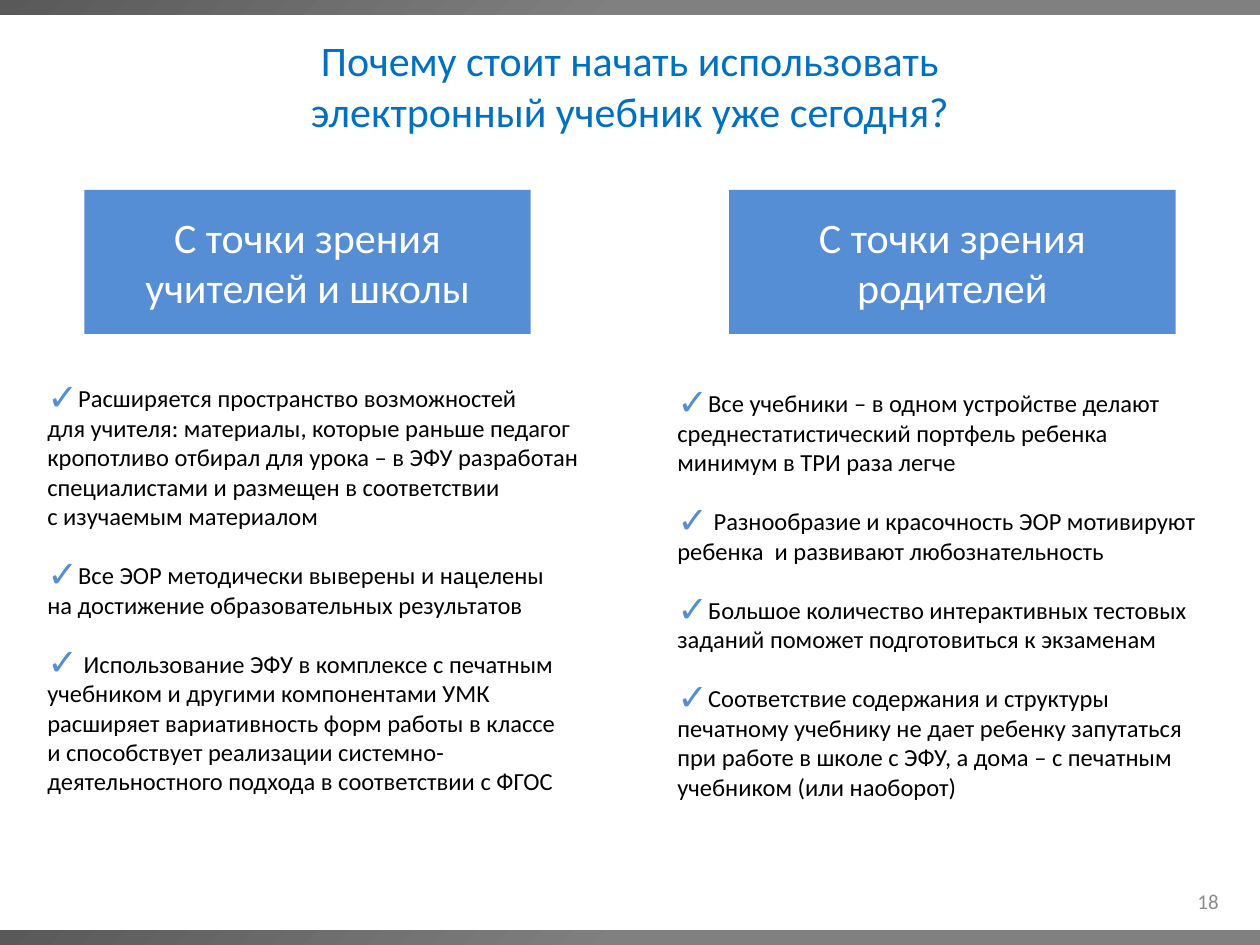
from lxml.etree import SubElement
from pptx import Presentation
from pptx.dml.color import RGBColor
from pptx.enum.shapes import MSO_SHAPE as Shape
from pptx.enum.text import MSO_ANCHOR as Anchor, MSO_AUTO_SIZE as AutoSize, PP_ALIGN as Align
from pptx.oxml.ns import qn
from pptx.util import Cm, Pt

DARK_GRAY = RGBColor(0x59, 0x59, 0x59)
GRAY = RGBColor(0x80, 0x80, 0x80)
NUMBER_GRAY = RGBColor(0x8C, 0x8C, 0x8C)
TITLE_BLUE = RGBColor(0x00, 0x70, 0xC0)
BLUE = RGBColor(0x55, 0x8E, 0xD5)
WHITE = RGBColor(0xFF, 0xFF, 0xFF)
BLACK = RGBColor(0x00, 0x00, 0x00)

TITLE = ["Почему стоит начать использовать", "электронный учебник уже сегодня?"]
TEACHER_REASONS = [
    ["Расширяется пространство возможностей",
     "для учителя: материалы, которые раньше педагог кропотливо отбирал для урока – "
     "в ЭФУ разработан специалистами и размещен в соответствии",
     "с изучаемым материалом"],
    ["Все ЭОР методически выверены и нацелены",
     "на достижение образовательных результатов"],
    [" Использование ЭФУ в комплексе с печатным учебником и другими компонентами УМК "
     "расширяет вариативность форм работы в классе",
     "и способствует реализации системно-деятельностного подхода в соответствии с ФГОС"],
]
PARENT_REASONS = [
    ["Все учебники – в одном устройстве делают среднестатистический портфель ребенка "
     "минимум в ТРИ раза легче"],
    [" Разнообразие и красочность ЭОР мотивируют ребенка  и развивают любознательность"],
    ["Большое количество интерактивных тестовых заданий поможет подготовиться к экзаменам"],
    ["Соответствие содержания и структуры печатному учебнику не дает ребенку запутаться "
     "при работе в школе с ЭФУ, а дома – с печатным учебником (или наоборот)"],
]


class SlideBuilder:
    """Holds the text style and the current slide, and draws its elements."""

    font = "Calibri"
    list_size = 14
    list_gap = 17

    def __init__(self, slide):
        self.slide = slide

    def place(self, shape, box):
        shape.left, shape.top, shape.width, shape.height = (Cm(length) for length in box)

    def add_run(self, paragraph, text, size, color):
        run = paragraph.add_run()
        run.text = text
        run.font.name, run.font.size = self.font, Pt(size)
        run.font.color.rgb = color

    def add_lines(self, frame, lines, size, color, align):
        frame.word_wrap = True
        frame.auto_size = AutoSize.NONE
        frame.vertical_anchor = Anchor.MIDDLE
        for index, line in enumerate(lines):
            paragraph = frame.add_paragraph() if index else frame.paragraphs[0]
            paragraph.alignment = align
            self.add_run(paragraph, line, size, color)

    def add_rectangle(self, box):
        shape = self.slide.shapes.add_shape(Shape.RECTANGLE, *(Cm(length) for length in box))
        shape.shadow.inherit = False
        shape.line.fill.background()
        return shape

    def add_bar(self, top):
        fill = self.add_rectangle((0, top, 25.4, 0.3)).fill
        fill.gradient()
        fill.gradient_angle = 315
        for stop, position, color in zip(fill.gradient_stops, (0, 0.5), (DARK_GRAY, GRAY)):
            stop.position, stop.color.rgb = position, color

    def add_title(self, lines, box):
        title = self.slide.shapes.title
        self.place(title, box)
        self.add_lines(title.text_frame, lines, 24, TITLE_BLUE, Align.CENTER)

    def add_heading(self, text, box):
        shape = self.add_rectangle(box)
        shape.fill.solid()
        shape.fill.fore_color.rgb = BLUE
        self.add_lines(shape.text_frame, [text], 24, WHITE, Align.CENTER)

    def add_number(self, text, box):
        shape = self.slide.shapes.add_textbox(*(Cm(length) for length in box))
        self.add_lines(shape.text_frame, [text], 12, NUMBER_GRAY, Align.RIGHT)

    def set_bullet(self, paragraph, checked):
        properties = paragraph._p.get_or_add_pPr()
        properties.set("marL", "0")
        properties.set("indent", "0")
        if not checked:
            SubElement(properties, qn("a:buNone"))
            return
        color = SubElement(properties, qn("a:buClr"))
        SubElement(color, qn("a:srgbClr"), val=str(BLUE))
        SubElement(properties, qn("a:buSzPct"), val="150000")
        SubElement(properties, qn("a:buFont"), typeface=self.font)
        SubElement(properties, qn("a:buChar"), char="✓")

    def add_checklist(self, index, reasons, box):
        placeholder = self.slide.placeholders[index]
        self.place(placeholder, box)
        frame = placeholder.text_frame
        frame.word_wrap = True
        frame.auto_size = AutoSize.NONE
        paragraph = frame.paragraphs[0]
        for number, reason in enumerate(reasons):
            for row, line in enumerate(reason):
                if number or row:
                    paragraph = frame.add_paragraph()
                self.set_bullet(paragraph, row == 0)
                paragraph.space_before = Pt(self.list_gap if number and not row else 0)
                self.add_run(paragraph, line, self.list_size, BLACK)


def main():
    presentation = Presentation()
    presentation.slide_width, presentation.slide_height = Cm(25.4), Cm(19.05)
    builder = SlideBuilder(presentation.slides.add_slide(presentation.slide_layouts[3]))
    for top in (0, 18.75):
        builder.add_bar(top)
    builder.add_title(TITLE, (1.27, 0.13, 22.86, 3.18))
    builder.add_heading("С точки зрения учителей и школы", (1.7, 3.83, 9, 2.9))
    builder.add_heading("С точки зрения родителей", (14.7, 3.83, 9, 2.9))
    builder.add_checklist(1, TEACHER_REASONS, (0.7, 7.6, 11.7, 8.64))
    builder.add_checklist(2, PARENT_REASONS, (13.4, 7.7, 11, 9.25))
    builder.add_number("18", (18.9, 17.65, 5.92, 1.02))
    presentation.save("out.pptx")


if __name__ == "__main__":
    main()
